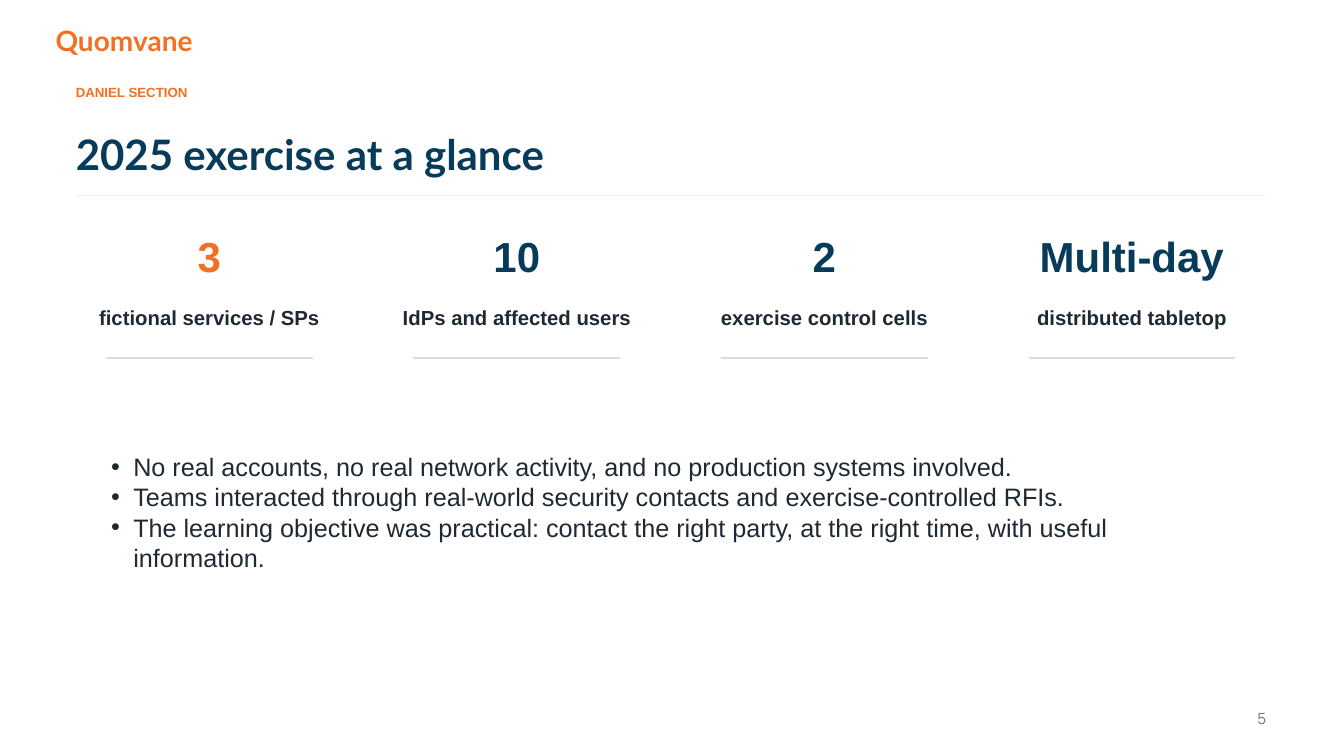
from lxml import etree
from pptx import Presentation
from pptx.dml.color import RGBColor
from pptx.enum.shapes import MSO_CONNECTOR
from pptx.enum.text import MSO_ANCHOR, PP_ALIGN
from pptx.oxml.ns import qn
from pptx.util import Cm, Pt

ORANGE = RGBColor(0xF3, 0x6F, 0x21)
NAVY = RGBColor(0x07, 0x3B, 0x5A)
INK = RGBColor(0x1F, 0x29, 0x33)
GREY = RGBColor(0x75, 0x75, 0x75)
TITLE_RULE = RGBColor(0xEE, 0xF2, 0xF4)
STAT_RULE = RGBColor(0xD6, 0xDE, 0xE3)
WHITE = RGBColor(0xFF, 0xFF, 0xFF)
LEFT, CENTER, RIGHT = PP_ALIGN.LEFT, PP_ALIGN.CENTER, PP_ALIGN.RIGHT
MIDDLE = MSO_ANCHOR.MIDDLE
STRAIGHT = MSO_CONNECTOR.STRAIGHT

MARGIN = 1.91
STAT_LEFT, STAT_PITCH, STAT_WIDTH, RULE_INSET = 2.29, 7.75, 5.97, 0.38
STATS = [
    ("3", "fictional services / SPs", ORANGE),
    ("10", "IdPs and affected users", NAVY),
    ("2", "exercise control cells", NAVY),
    ("Multi-day", "distributed tabletop", NAVY),
]
POINTS = [
    "No real accounts, no real network activity, and no production systems involved.",
    "Teams interacted through real-world security contacts and exercise-controlled RFIs.",
    "The learning objective was practical: contact the right party, at the right time, "
    "with useful information.",
]


class SlideBuilder:
    """Draws styled text, bullets, rules and statistics on one slide, in centimetres."""

    body_font = "Arial"
    heading_font = "Lato"
    number_font = "Manrope"
    bullet_indent = Cm(0.56)

    def __init__(self, slide):
        self.slide = slide
        slide.background.fill.solid()
        slide.background.fill.fore_color.rgb = WHITE

    def frame(self, left, top, width, height):
        box = self.slide.shapes.add_textbox(Cm(left), Cm(top), Cm(width), Cm(height))
        frame = box.text_frame
        frame.word_wrap = True
        frame.vertical_anchor = MIDDLE
        frame.margin_left = frame.margin_right = 0
        frame.margin_top = frame.margin_bottom = 0
        return frame

    def run(self, paragraph, text, size, color, bold, font):
        run = paragraph.add_run()
        run.text = text
        run.font.name = font
        run.font.size = Pt(size)
        run.font.bold = bold
        run.font.color.rgb = color

    def text(self, text, left, top, width, height, size, color,
             bold=True, font=body_font, align=LEFT):
        paragraph = self.frame(left, top, width, height).paragraphs[0]
        paragraph.alignment = align
        self.run(paragraph, text, size, color, bold, font)

    def bullets(self, points, left, top, width, height, size, color):
        frame = self.frame(left, top, width, height)
        for index, point in enumerate(points):
            paragraph = frame.add_paragraph() if index else frame.paragraphs[0]
            properties = paragraph._p.get_or_add_pPr()
            properties.set("marL", str(self.bullet_indent))
            properties.set("indent", str(-self.bullet_indent))
            bullet_color = etree.SubElement(properties, qn("a:buClr"))
            etree.SubElement(bullet_color, qn("a:srgbClr"), val=str(color))
            etree.SubElement(properties, qn("a:buFont"), typeface=self.body_font)
            etree.SubElement(properties, qn("a:buChar"), char="•")
            self.run(paragraph, point, size, color, False, self.body_font)

    def rule(self, left, top, width, color):
        line = self.slide.shapes.add_connector(
            STRAIGHT, Cm(left), Cm(top), Cm(left + width), Cm(top))
        line.line.color.rgb = color
        line.line.width = Pt(1)
        etree.SubElement(line._element.spPr, qn("a:effectLst"))

    def stat(self, left, value, label, color):
        self.text(value, left, 5.72, STAT_WIDTH, 1.47, 30, color, align=CENTER)
        self.text(label, left, 7.44, STAT_WIDTH, 1.12, 14.5, INK, align=CENTER)
        self.rule(left + RULE_INSET, 9.02, STAT_WIDTH - 2 * RULE_INSET, STAT_RULE)


def main():
    presentation = Presentation()
    presentation.slide_width, presentation.slide_height = Cm(33.87), Cm(19.05)
    builder = SlideBuilder(presentation.slides.add_slide(presentation.slide_layouts[6]))

    builder.text("5", 29.24, 17.72, 2.67, 0.76, 11, GREY,
                 bold=False, font=builder.number_font, align=RIGHT)
    builder.text("Quomvane", 1.4, 0.56, 4.95, 0.89, 20, ORANGE, font=builder.heading_font)
    builder.text("DANIEL SECTION", MARGIN, 2.1, 25.91, 0.46, 9.5, ORANGE)
    builder.text("2025 exercise at a glance", MARGIN, 3.25, 29.46, 1.27, 30, NAVY,
                 font=builder.heading_font)
    builder.rule(MARGIN, 4.93, 29.97, TITLE_RULE)

    for index, (value, label, color) in enumerate(STATS):
        builder.stat(STAT_LEFT + index * STAT_PITCH, value, label, color)

    builder.bullets(POINTS, 2.8, 11.06, 28.45, 3.68, 18, INK)
    presentation.save("out.pptx")


if __name__ == "__main__":
    main()
